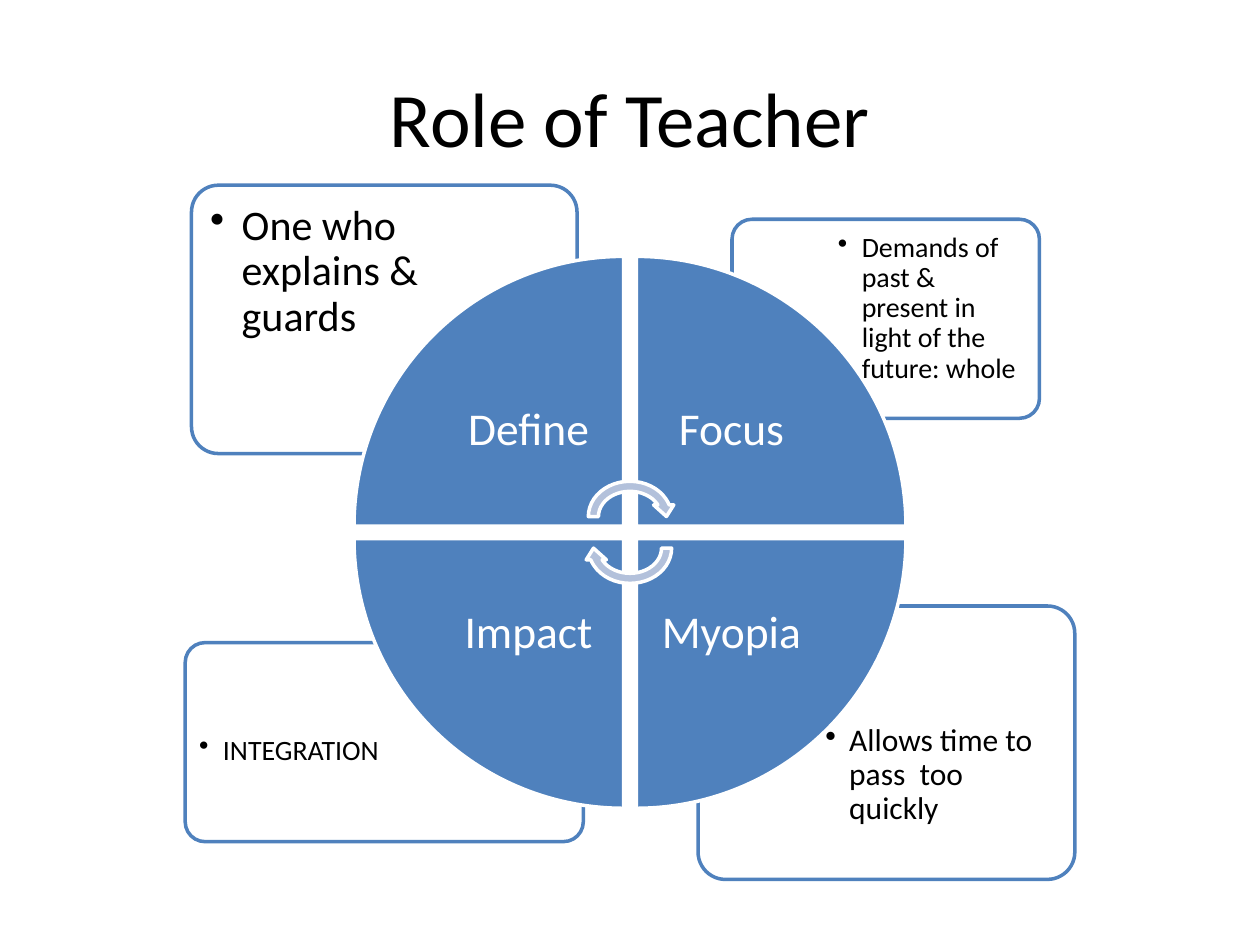
"""Build the Role of Teacher slide: four quadrants with note cards."""
import pptx
import pptx.util
import pptx.dml.color
import pptx.enum.shapes
import pptx.enum.text
import pptx.oxml.ns
import lxml.etree

Inches = pptx.util.Inches
Pt = pptx.util.Pt
KIND = pptx.enum.shapes.MSO_SHAPE
ALIGN = pptx.enum.text.PP_ALIGN
ANCHOR = pptx.enum.text.MSO_ANCHOR
BLUE, PALE, WHITE, BLACK = "4F81BD", "B3C1DB", "FFFFFF", "000000"
SIDE, MID_X, MID_Y, GAP = 2.14, 5, 4.225, 0.1
LABEL = 1.51

# card place, text place, inset, indent, size, words
CARDS = [
    ((5.54, 4.81, 2.99, 2.17), (6.48, 5.68, 2, 1.25), 0.07, 0.19, 18,
     "Allows time to pass  too quickly"),
    ((1.47, 5.1, 3.16, 1.58), (1.51, 5.77, 2.14, 0.88), 0.07, 0.19, 16,
     "INTEGRATION"),
    ((5.81, 1.74, 2.44, 1.58), (6.58, 1.78, 1.64, 1.12), 0.07, 0.19, 16,
     "Demands of past & present in light of the future: whole"),
    ((1.52, 1.47, 3.06, 2.13), (1.57, 1.52, 2.05, 1.5), 0.1, 0.25, 24,
     "One who explains & guards"),
]
# words, column, row in clockwise order
WEDGES = [("Define", 0, 0), ("Focus", 1, 0), ("Myopia", 1, 1), ("Impact", 0, 1)]


def color(code):
    """Return the colour for a hex string."""
    return pptx.dml.color.RGBColor.from_string(code)


def style(para, size, code, align):
    """Set the font and alignment of a paragraph."""
    para.alignment = align
    para.font.name = "Calibri"
    para.font.size = Pt(size)
    para.font.color.rgb = color(code)


def shape(slide, kind, place, fill, line, turn=0):
    """Add a filled and outlined shape."""
    item = slide.shapes.add_shape(kind, *map(Inches, place))
    item.shadow.inherit = False
    item.fill.solid()
    item.fill.fore_color.rgb = color(fill)
    item.line.color.rgb = color(line)
    item.line.width = Pt(2)
    item.rotation = turn
    return item


def text(slide, place, words, size, code, inset, align):
    """Add a wrapped text box and return its frame."""
    frame = slide.shapes.add_textbox(*map(Inches, place)).text_frame
    frame.word_wrap = True
    frame.margin_left = frame.margin_right = Inches(inset)
    frame.margin_top = frame.margin_bottom = Inches(inset)
    para = frame.paragraphs[0]
    para.text = words
    para.line_spacing = 0.9
    style(para, size, code, align)
    return frame


def bullet(para, indent):
    """Give a paragraph a hanging bullet."""
    props = para._p.get_or_add_pPr()
    props.set("marL", str(Inches(indent)))
    props.set("indent", str(-Inches(indent)))
    mark = lxml.etree.SubElement(props, pptx.oxml.ns.qn("a:buChar"))
    mark.set("char", "•")
    props.insert_element_before(mark, "a:tabLst", "a:defRPr", "a:extLst")


def card(slide, place, area, inset, indent, size, words):
    """Add a rounded card with its bulleted note."""
    shape(slide, KIND.ROUNDED_RECTANGLE, place, WHITE, BLUE).adjustments[0] = 0.1
    frame = text(slide, area, words, size, BLACK, inset, ALIGN.LEFT)
    bullet(frame.paragraphs[0], indent)


def wedge(slide, words, col, row, turn):
    """Add one quarter of the circle and its label near the centre."""
    def spot(size):
        """Place a square in the quadrant against the centre gap."""
        return (MID_X + (GAP / 2 if col else -GAP / 2 - size),
                MID_Y + (GAP / 2 if row else -GAP / 2 - size), size, size)

    shape(slide, KIND.PIE_WEDGE, spot(SIDE), BLUE, WHITE, turn)
    frame = text(slide, spot(LABEL), words, 26, WHITE, 0.2, ALIGN.CENTER)
    frame.vertical_anchor = ANCHOR.MIDDLE


def title(slide, words):
    """Place and format the slide title."""
    head = slide.shapes.title
    head.left, head.top = Inches(0.5), Inches(0.3)
    head.width, head.height = Inches(9), Inches(1.25)
    head.text_frame.text = words
    head.text_frame.vertical_anchor = ANCHOR.MIDDLE
    style(head.text_frame.paragraphs[0], 44, BLACK, ALIGN.CENTER)


def main():
    """Build and save the slide."""
    deck = pptx.Presentation()
    deck.slide_width, deck.slide_height = Inches(10), Inches(7.5)
    slide = deck.slides.add_slide(deck.slide_layouts[5])
    title(slide, "Role of Teacher")
    for data in CARDS:
        card(slide, *data)
    for step, data in enumerate(WEDGES):
        wedge(slide, *data, 90 * step)
    for top, turn in ((3.78, 0), (4.03, 180)):
        shape(slide, KIND.CIRCULAR_ARROW, (4.63, top, 0.74, 0.64), PALE, WHITE, turn)
    deck.save("out.pptx")


if __name__ == "__main__":
    main()
